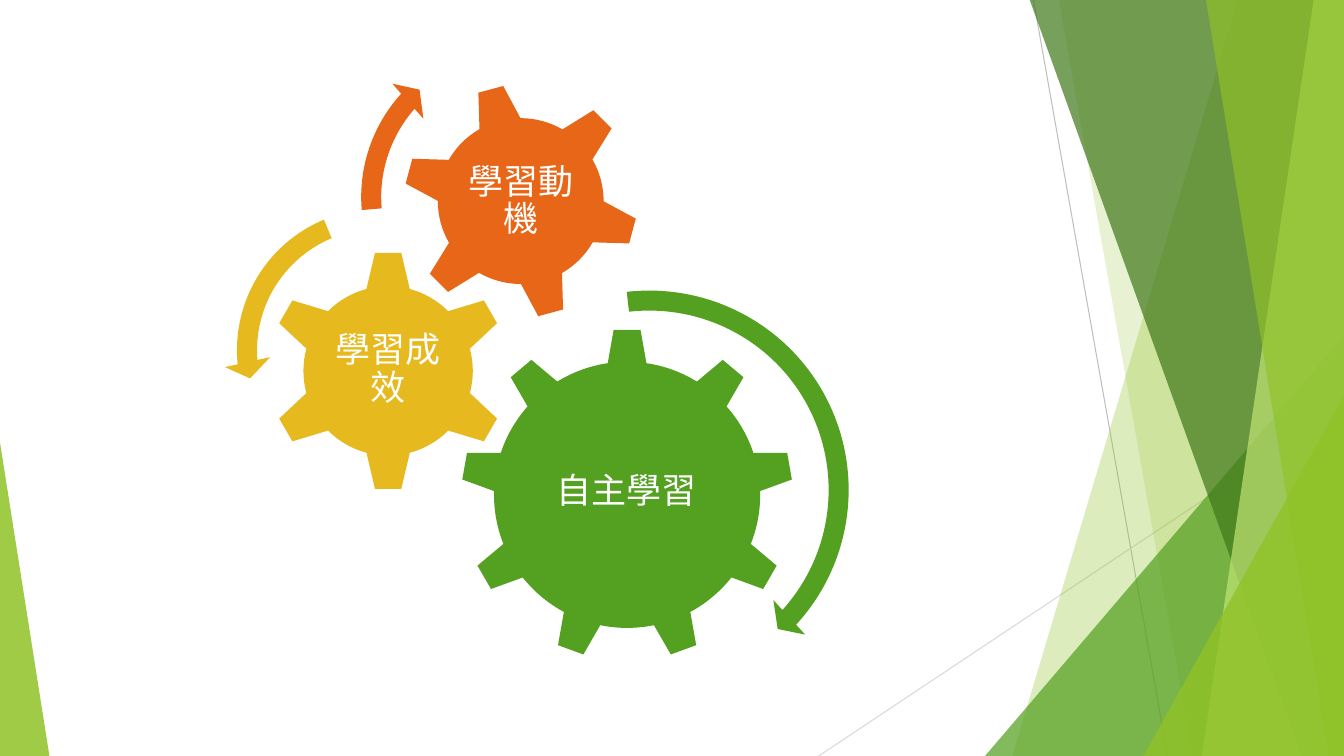
from pptx import Presentation
from pptx.dml.color import RGBColor
from pptx.enum.shapes import MSO_CONNECTOR, MSO_SHAPE as SHAPE
from pptx.enum.text import MSO_ANCHOR, PP_ALIGN
from pptx.oxml.ns import qn
from pptx.util import Inches, Pt
from lxml.etree import SubElement

WIDTH, HEIGHT, TOP = 13.33, 7.5, -0.01
LIME, GREEN, DARK, PALE = "90C226", "54A021", "3F7819", "C0E474"
YELLOW, ORANGE, WHITE = "E6B91E", "E76618", "FFFFFF"


def color(value):
    return RGBColor.from_string(value)


class GearSlide:
    font_name = "Karla"
    font_size = Pt(25)

    def __init__(self, slide):
        self.slide = slide
        self.shapes = slide.shapes

    def paint(self, shape, fill, opacity=100):
        shape.shadow.inherit = False
        shape.fill.solid()
        shape.fill.fore_color.rgb = color(fill)
        shape.line.fill.background()
        if opacity < 100:
            srgb = shape.fill._xPr.find(qn("a:solidFill")).find(qn("a:srgbClr"))
            SubElement(srgb, qn("a:alpha"), val=str(opacity * 1000))

    def line(self, start, end, stroke):
        points = [Inches(value) for value in (*start, *end)]
        connector = self.shapes.add_connector(MSO_CONNECTOR.STRAIGHT, *points)
        connector.line.color.rgb = color(stroke)
        connector.line.width = Pt(0.75)
        SubElement(connector._element.spPr, qn("a:effectLst"))

    def band(self, top_x, bottom_x, fill, opacity):
        """Panel from a slanted left edge to the right edge of the slide."""
        corners = [(top_x, TOP), (WIDTH, TOP), (WIDTH, HEIGHT), (bottom_x, HEIGHT)]
        points = [(Inches(x), Inches(y)) for x, y in corners]
        builder = self.shapes.build_freeform(*points[0], scale=1.0)
        builder.add_line_segments(points[1:], close=True)
        self.paint(builder.convert_to_shape(), fill, opacity)

    def preset(self, kind, box, fill, opacity=100, adjustments=(), rotation=0):
        shape = self.shapes.add_shape(kind, *map(Inches, box))
        for index, value in enumerate(adjustments):
            shape.adjustments[index] = value
        shape.rotation = rotation
        self.paint(shape, fill, opacity)

    def label(self, text, box):
        frame = self.shapes.add_textbox(*map(Inches, box)).text_frame
        frame.word_wrap = True
        frame.vertical_anchor = MSO_ANCHOR.MIDDLE
        frame.margin_left = frame.margin_right = Inches(0.03)
        frame.margin_top = frame.margin_bottom = Inches(0.03)
        paragraph = frame.paragraphs[0]
        paragraph.text = text
        paragraph.alignment = PP_ALIGN.CENTER
        paragraph.line_spacing = 0.9
        paragraph.font.name = self.font_name
        paragraph.font.size = self.font_size
        paragraph.font.color.rgb = color(WHITE)


def main():
    presentation = Presentation()
    presentation.slide_width = Inches(WIDTH)
    presentation.slide_height = Inches(HEIGHT)
    page = GearSlide(presentation.slides.add_slide(presentation.slide_layouts[6]))

    # Background facets
    page.line((10.25, 0), (11.58, HEIGHT), "BFBFBF")
    page.line((WIDTH, 4.03), (8.12, HEIGHT), "D9D9D9")
    page.band(12.28, 10.04, LIME, 30)
    page.band(10.5, 11.83, LIME, 20)
    page.preset(SHAPE.ISOSCELES_TRIANGLE, (9.77, 3.33, 3.56, 4.17), GREEN, 72, [1])
    page.band(10.21, 12.91, DARK, 70)
    page.band(13.03, 11.92, PALE, 70)
    page.band(11.96, 13.18, LIME, 65)
    page.preset(SHAPE.ISOSCELES_TRIANGLE, (11.34, 3.93, 1.99, 3.57), LIME, 80, [1])
    page.preset(SHAPE.ISOSCELES_TRIANGLE, (0, 4.39, 0.49, 3.11), LIME, 85, [0])

    # Gears with their labels
    gears = [
        ("自主學習", SHAPE.GEAR_9, (4.57, 3.26, 3.3, 3.3), (5.23, 4.03, 1.97, 1.7), GREEN, 0),
        ("學習成效", SHAPE.GEAR_6, (2.65, 2.48, 2.4, 2.4), (3.25, 3.08, 1.19, 1.18), YELLOW, 0),
        ("學習動機", SHAPE.GEAR_6, (3.99, 0.82, 2.35, 2.35), (4.51, 1.34, 1.32, 1.32), ORANGE, 345),
    ]
    for text, kind, gear_box, text_box, fill, rotation in gears:
        page.preset(kind, gear_box, fill, rotation=rotation)
        page.label(text, text_box)

    # Turning arrows: left, top, size, then thickness and angles
    arrows = [
        (SHAPE.CIRCULAR_ARROW, 4.33, 2.75, 4.22, GREEN, (0.047, 2.99, 25.4, 158.1, 0.055)),
        (SHAPE.LEFT_CIRCULAR_ARROW, 2.22, 1.94, 3.07, YELLOW, (0.065, 4.3, 104.89, 148.38, 0.075)),
        (SHAPE.CIRCULAR_ARROW, 3.45, 0.3, 3.31, ORANGE, (0.06, 3.94, 133.14, 105.08, 0.07)),
    ]
    for kind, left, top, size, fill, adjustments in arrows:
        page.preset(kind, (left, top, size, size), fill, adjustments=adjustments)

    presentation.save("out.pptx")


if __name__ == "__main__":
    main()
